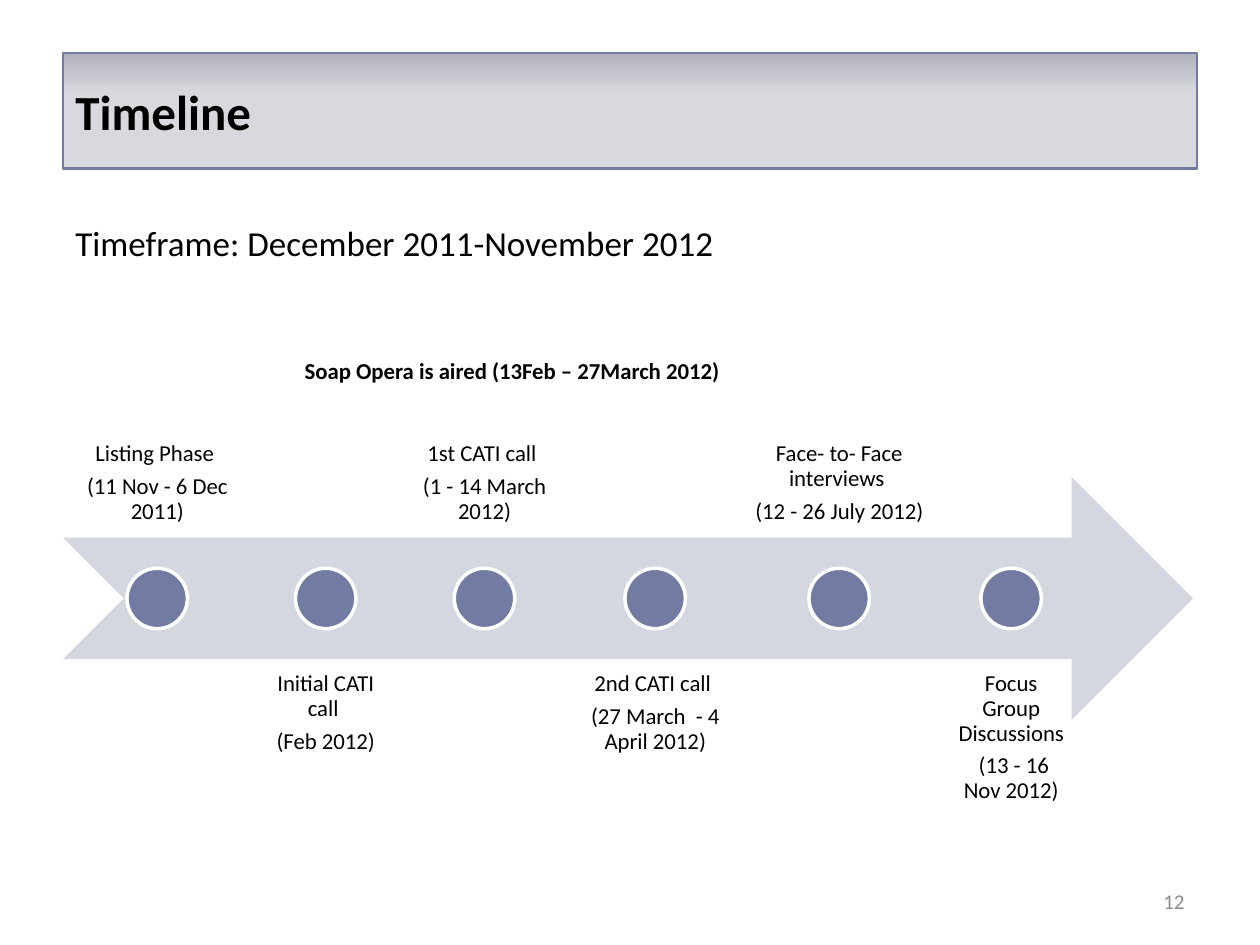
from copy import deepcopy

from pptx import Presentation
from pptx.dml.color import RGBColor
from pptx.enum.shapes import MSO_SHAPE
from pptx.enum.text import MSO_ANCHOR, PP_ALIGN
from pptx.oxml.ns import qn
from pptx.util import Inches, Pt

BLACK = RGBColor(0x00, 0x00, 0x00)
WHITE = RGBColor(0xFF, 0xFF, 0xFF)
GREY = RGBColor(0x8C, 0x8C, 0x8C)
SLATE = RGBColor(0x72, 0x7C, 0xA3)
PALE_SLATE = RGBColor(0xD5, 0xD7, 0xE0)
BANNER_LIGHT = RGBColor(0xD8, 0xD8, 0xDE)
BANNER_DARK = RGBColor(0xB2, 0xB2, 0xBE)

# Grid of 100 columns by 75 rows
CELL = Inches(0.1)
MARGIN = 5
CONTENT_WIDTH = 90

# Timeline, in grid cells
ARROW_TOP, ARROW_WIDTH, ARROW_HEIGHT = 37.85, 89.7, 19.3
LABEL_TOPS = {"above": 23.3, "below": 52.35}
PHASE_GAP = 0.5
DOT_SIZE = 4.8

PHASES = [  # width, side of the arrow, lines
    (14.95, "above", ["Listing Phase ", "(11 Nov - 6 Dec 2011)"]),
    (10.8, "below", ["Initial CATI call ", "(Feb 2012)"]),
    (13.4, "above", ["1st CATI call ", "(1 - 14 March 2012)"]),
    (12.7, "below", ["2nd CATI call ", "(27 March  - 4 April 2012)"]),
    (15.5, "above", ["Face- to- Face interviews ", "(12 - 26 July 2012)"]),
    (10.8, "below", ["Focus Group Discussions", " (13 - 16 Nov 2012)"]),
]
LABEL_FORMAT = {"alignment": PP_ALIGN.CENTER, "line_spacing": 0.9, "space_after": Pt(4.55)}


class TimelineSlide:
    font_name = "Calibri"

    def __init__(self, deck):
        self.slide = deck.slides.add_slide(deck.slide_layouts[6])

    def box(self, left, top, width, height):
        return [round(cells * CELL) for cells in (left, top, width, height)]

    def fill_text(self, frame, lines, size, color=BLACK, bold=False,
                  anchor=MSO_ANCHOR.TOP, paragraph_format=None):
        frame.word_wrap = True
        frame.vertical_anchor = anchor
        for number, line in enumerate(lines):
            paragraph = frame.add_paragraph() if number else frame.paragraphs[0]
            for name, value in (paragraph_format or {}).items():
                setattr(paragraph, name, value)
            run = paragraph.add_run()
            run.text = line
            for name, value in {"name": self.font_name, "size": Pt(size), "bold": bold}.items():
                setattr(run.font, name, value)
            run.font.color.rgb = color

    def text(self, place, lines, size, inset=None, **style):
        frame = self.slide.shapes.add_textbox(*self.box(*place)).text_frame
        if inset is not None:
            for side in ("left", "top", "right", "bottom"):
                setattr(frame, f"margin_{side}", inset)
        self.fill_text(frame, lines, size, **style)

    def shape(self, kind, place, fill=None, line=None, line_width=0):
        shape = self.slide.shapes.add_shape(kind, *self.box(*place))
        shape.shadow.inherit = False
        if fill is not None:
            shape.fill.solid()
            shape.fill.fore_color.rgb = fill
        if line is None:
            shape.line.fill.background()
        else:
            shape.line.color.rgb = line
            shape.line.width = Pt(line_width)
        return shape

    def banner(self, place, title):
        banner = self.shape(MSO_SHAPE.RECTANGLE, place, line=SLATE, line_width=1.5)
        banner.fill.gradient()
        banner.fill.gradient_angle = 90
        # A third gradient stop keeps the lower part flat
        stops = banner.element.spPr.find(".//" + qn("a:gsLst"))
        stops.append(deepcopy(stops[-1]))
        shades = [(0, BANNER_LIGHT), (0.65, BANNER_LIGHT), (1, BANNER_DARK)]
        for stop, (position, color) in zip(banner.fill.gradient_stops, shades):
            stop.position = position
            stop.color.rgb = color
        self.fill_text(banner.text_frame, [title], 28, bold=True, anchor=MSO_ANCHOR.MIDDLE,
                       paragraph_format={"alignment": PP_ALIGN.LEFT})

    def phase(self, left, width, side, lines):
        anchor = MSO_ANCHOR.BOTTOM if side == "above" else MSO_ANCHOR.TOP
        self.text((left, LABEL_TOPS[side], width, ARROW_HEIGHT), lines, 13,
                  inset=Inches(0.1), anchor=anchor, paragraph_format=LABEL_FORMAT)
        dot_left = left + (width - DOT_SIZE) / 2
        dot_top = ARROW_TOP + (ARROW_HEIGHT - DOT_SIZE) / 2
        self.shape(MSO_SHAPE.OVAL, (dot_left, dot_top, DOT_SIZE, DOT_SIZE), SLATE, WHITE, 2)


def main():
    deck = Presentation()
    deck.slide_width, deck.slide_height = 100 * CELL, 75 * CELL
    page = TimelineSlide(deck)

    # Title and page number
    page.banner((MARGIN, 4.2, CONTENT_WIDTH, 9.2), "Timeline")
    page.text((71.7, 69.5, 23.3, 4), ["12"], 12, color=GREY, anchor=MSO_ANCHOR.MIDDLE,
              paragraph_format={"alignment": PP_ALIGN.RIGHT})

    # Arrow with its phases, laid side by side
    page.shape(MSO_SHAPE.NOTCHED_RIGHT_ARROW,
               (MARGIN, ARROW_TOP, ARROW_WIDTH, ARROW_HEIGHT), PALE_SLATE)
    left = MARGIN
    for width, side, lines in PHASES:
        page.phase(left, width, side, lines)
        left += width + PHASE_GAP

    # Timeframe and broadcast period
    page.text((MARGIN, 17.1, 67.5, 4.4), ["Timeframe: December 2011-November 2012"], 20)
    page.text((23.2, 27.5, 36.2, 5.8), ["Soap Opera is aired (13Feb – 27March 2012)"], 13,
              bold=True, paragraph_format={"line_spacing": 1.15, "space_after": Pt(10)})

    deck.save("out.pptx")


if __name__ == "__main__":
    main()
